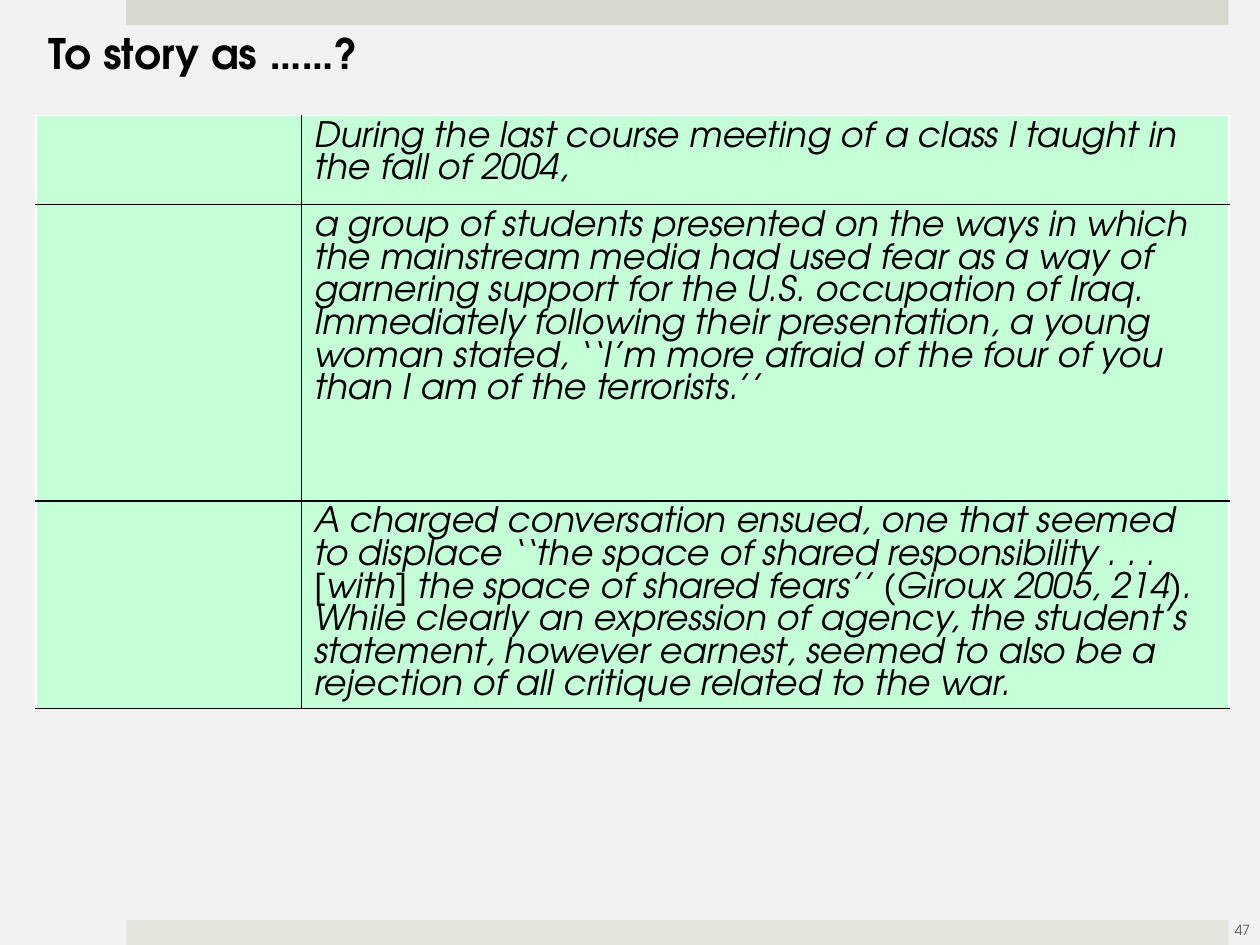
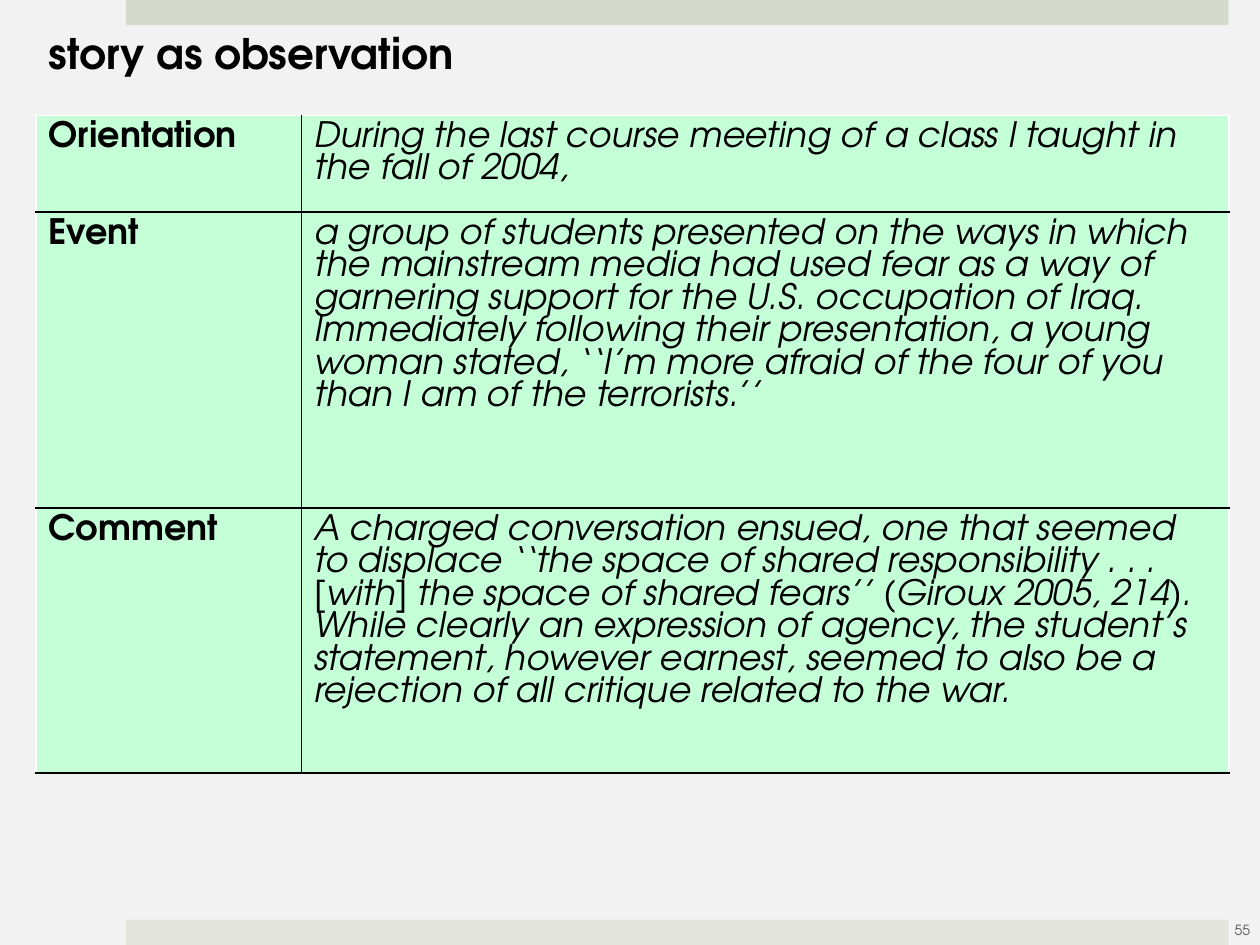
import pptx
import pptx.util
import pptx.dml.color
import pptx.enum.shapes
import pptx.enum.text
import pptx.oxml
import pptx.oxml.ns

FONT = "TeX Gyre Adventor"
COLORS = {
    "page": "F2F2F2",
    "top_band": "D6D9CD",
    "bottom_band": "E4E6DE",
    "cell": "C5FFD8",
    "ink": "000000",
    "edge": "FFFFFF",
    "number": "595959",
}
GRID_COLUMNS, GRID_ROWS = 100, 75
STAGE_COLUMNS = (21.1, 73.6)
STAGE_ROWS = (7.1, 23.5, 16.4)

# Content
STORY = [
    "During the last course meeting of a class I taught in the fall of 2004,",
    "a group of students presented on the ways in which the mainstream media "
    "had used fear as a way of garnering support for the U.S. occupation of "
    "Iraq. Immediately following their presentation, a young woman stated, "
    "‘‘I’m more afraid of the four of you than I am of the terrorists.’’",
    "A charged conversation ensued, one that seemed to displace ‘‘the space of "
    "shared responsibility . . . [with] the space of shared fears’’ (Giroux "
    "2005, 214). While clearly an expression of agency, the student’s "
    "statement, however earnest, seemed to also be a rejection of all critique "
    "related to the war.",
]
SLIDES = [
    ("To story as ……?", ["", "", ""], "47"),
    ("story as observation", ["Orientation", "Event", "Comment"], "55"),
]


def rgb(color):
    return pptx.dml.color.RGBColor.from_string(COLORS[color])


def write(frame, text, size=20, color="ink", bold=False, italic=False,
          align=pptx.enum.text.PP_ALIGN.LEFT):
    paragraph = frame.paragraphs[0]
    paragraph.alignment = align
    paragraph.font.size = pptx.util.Pt(size)
    if text:
        run = paragraph.add_run()
        run.text = text
        run.font.name = FONT
        run.font.size = pptx.util.Pt(size)
        run.font.bold = bold
        run.font.italic = italic
        run.font.color.rgb = rgb(color)


def set_borders(cell, **sides):
    """Draw 1 pt borders; sides come in the order L, R, T, B."""
    properties = cell._tc.get_or_add_tcPr()
    for place, (side, color) in enumerate(sides.items()):
        properties.insert(place, pptx.oxml.parse_xml(
            f'<a:ln{side} {pptx.oxml.ns.nsdecls("a")} w="12700"><a:solidFill>'
            f'<a:srgbClr val="{COLORS[color]}"/></a:solidFill></a:ln{side}>'))


class Deck:
    def __init__(self):
        self.prs = pptx.Presentation()
        self.prs.slide_width = pptx.util.Inches(10)
        self.prs.slide_height = pptx.util.Inches(7.5)
        self.slide = None

    def x(self, columns):
        return round(self.prs.slide_width * columns / GRID_COLUMNS)

    def y(self, rows):
        return round(self.prs.slide_height * rows / GRID_ROWS)

    def box(self, left, top, width, height):
        return self.x(left), self.y(top), self.x(width), self.y(height)

    def new_slide(self):
        self.slide = self.prs.slides.add_slide(self.prs.slide_layouts[6])
        background = self.slide.background.fill
        background.solid()
        background.fore_color.rgb = rgb("page")
        self.band(0, "top_band")
        self.band(GRID_ROWS - 2, "bottom_band")

    def band(self, top, color):
        band = self.slide.shapes.add_shape(
            pptx.enum.shapes.MSO_SHAPE.RECTANGLE, *self.box(10, top, 87.5, 2))
        band.shadow.inherit = False
        band.fill.solid()
        band.fill.fore_color.rgb = rgb(color)
        band.line.fill.background()

    def text(self, place, text, anchor=pptx.enum.text.MSO_ANCHOR.TOP,
             auto_size=pptx.enum.text.MSO_AUTO_SIZE.NONE, **style):
        frame = self.slide.shapes.add_textbox(*self.box(*place)).text_frame
        frame.word_wrap = True
        frame.auto_size = auto_size
        frame.vertical_anchor = anchor
        write(frame, text, **style)

    def title(self, text):
        self.text((2.85, 1.7, 88.3, 5), text, size=24, bold=True,
                  auto_size=pptx.enum.text.MSO_AUTO_SIZE.SHAPE_TO_FIT_TEXT)

    def page_number(self, number):
        self.text((96.1, 71.8, 5, 4), number, size=8, color="number",
                  anchor=pptx.enum.text.MSO_ANCHOR.MIDDLE,
                  align=pptx.enum.text.PP_ALIGN.CENTER)

    def stage_table(self, stages, passages):
        table = self.slide.shapes.add_table(
            len(stages), 2,
            *self.box(2.85, 9.15, sum(STAGE_COLUMNS), sum(STAGE_ROWS))).table
        table.first_row = table.horz_banding = False
        for column, width in zip(table.columns, STAGE_COLUMNS):
            column.width = self.x(width)
        for row, height in zip(table.rows, STAGE_ROWS):
            row.height = self.y(height)
        for i, (stage, passage) in enumerate(zip(stages, passages)):
            top = "ink" if i else "edge"
            label, story = table.cell(i, 0), table.cell(i, 1)
            for cell in (label, story):
                cell.fill.solid()
                cell.fill.fore_color.rgb = rgb("cell")
            set_borders(label, L="edge", R="ink", T=top, B="ink")
            set_borders(story, L="ink", R="edge", T=top, B="ink")
            write(label.text_frame, stage, bold=True)
            write(story.text_frame, passage, italic=True)


def main():
    deck = Deck()
    for title, stages, number in SLIDES:
        deck.new_slide()
        deck.stage_table(stages, STORY)
        deck.title(title)
        deck.page_number(number)
    deck.prs.save("out.pptx")


if __name__ == "__main__":
    main()
